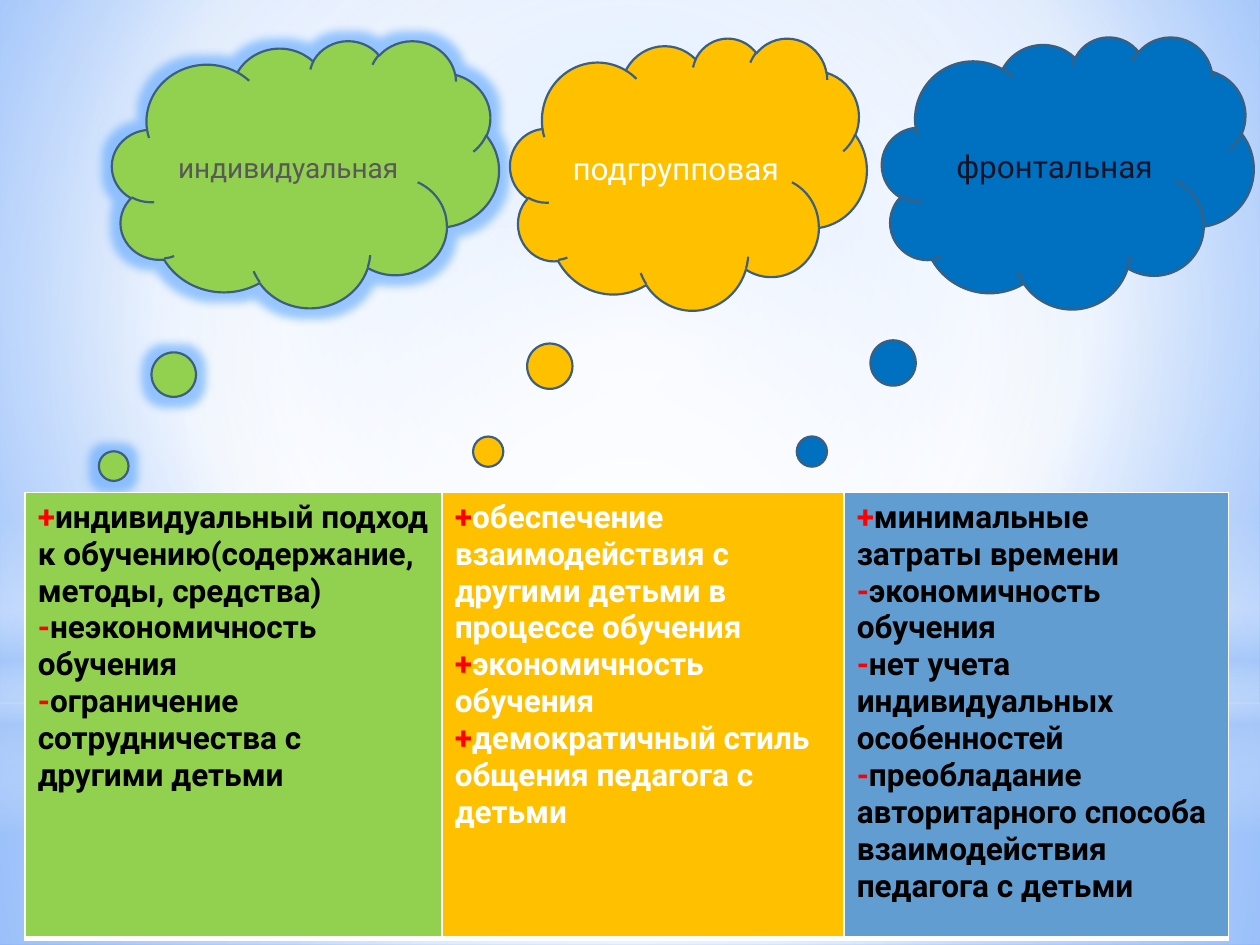
from typing import NamedTuple

from lxml import etree
from pptx import Presentation
from pptx import util as u
from pptx.dml.color import RGBColor
from pptx.enum import shapes, text
from pptx.oxml import ns

FONT = "Roboto"
WHITE = RGBColor(0xFF, 0xFF, 0xFF)
BLACK = RGBColor(0x00, 0x00, 0x00)
RED = RGBColor(0xFF, 0x00, 0x00)
GREEN = RGBColor(0x92, 0xD0, 0x50)
AMBER = RGBColor(0xFF, 0xC0, 0x00)
BLUE = RGBColor(0x00, 0x70, 0xC0)
SOFT_BLUE = RGBColor(0x62, 0x9D, 0xD1)
PALE_BLUE = RGBColor(0xAC, 0xCB, 0xF9)
SKY = RGBColor(0x95, 0xC0, 0xFF)
DEEP_SKY = RGBColor(0x55, 0x99, 0xFF)
GLOW = RGBColor(0x5A, 0xA5, 0xFF)
OUTLINE = RGBColor(0x3C, 0x5F, 0x7F)
GREY = RGBColor(0x59, 0x59, 0x59)
NAVY = RGBColor(0x12, 0x14, 0x29)


class Stop(NamedTuple):
    pos: int
    color: RGBColor
    opacity: int = 100


class Layer(NamedTuple):
    kind: shapes.MSO_SHAPE
    top: float
    height: float
    stops: list[Stop]
    radial: bool = True


class Cloud(NamedTuple):
    label: str
    box: tuple[float, float, float, float]
    tail: tuple[float, float]
    fill: RGBColor
    color: RGBColor
    size: int = 18
    glow: bool = False


class Column(NamedTuple):
    width: float
    fill: RGBColor
    color: RGBColor
    points: list[str]  # the first character is the plus or minus sign


CENTER = (50, 50, 50, 50)
RECT, OVAL = shapes.MSO_SHAPE.RECTANGLE, shapes.MSO_SHAPE.OVAL

BACKDROP = [Stop(0, SKY), Stop(60, WHITE), Stop(100, DEEP_SKY)]
LAYERS = [
    Layer(RECT, 5.58, 1.92, [Stop(0, WHITE, 91), Stop(37, WHITE, 76), Stop(100, PALE_BLUE, 79)]),
    Layer(RECT, 0, 5.58, [Stop(0, WHITE, 89), Stop(48, WHITE, 62), Stop(100, PALE_BLUE, 79)]),
    Layer(RECT, 4.12, 2.5, [Stop(0, WHITE, 0), Stop(29, WHITE, 30), Stop(45, PALE_BLUE, 40),
                            Stop(55, WHITE, 26), Stop(65, PALE_BLUE, 60),
                            Stop(100, WHITE, 0)], radial=False),
    Layer(OVAL, 1.75, 5.58, [Stop(0, WHITE), Stop(56, WHITE, 0)]),
]
CLOUDS = [
    Cloud("индивидуальная ", (0.89, 0.32, 3.07, 2.12), (-0.63, 1.39), GREEN, GREY, 16, True),
    Cloud("подгрупповая", (4.05, 0.3, 2.83, 2.16), (-0.71, 1.29), AMBER, WHITE),
    Cloud("фронтальная", (7, 0.29, 2.95, 2.16), (-0.88, 1.31), BLUE, NAVY),
]
COLUMNS = [
    Column(3.31, GREEN, BLACK, [
        "+индивидуальный подход к обучению(содержание, методы, средства)",
        "-неэкономичность обучения",
        "-ограничение сотрудничества с другими детьми"]),
    Column(3.19, AMBER, WHITE, [
        "+обеспечение взаимодействия с другими детьми в процессе обучения",
        "+экономичность обучения",
        "+демократичный стиль общения педагога с детьми"]),
    Column(3.05, SOFT_BLUE, BLACK, [
        "+минимальные затраты времени",
        "-экономичность обучения",
        "-нет учета индивидуальных особенностей",
        "-преобладание авторитарного способа взаимодействия педагога с детьми"]),
]


def add_xml(parent, tag: str, **attrs):
    return etree.SubElement(parent, ns.qn(tag), {k: str(v) for k, v in attrs.items()})


def add_color(parent, color: RGBColor, opacity: int = 100) -> None:
    clr = add_xml(parent, "a:srgbClr", val=color)
    if opacity < 100:
        add_xml(clr, "a:alpha", val=opacity * 1000)


def set_gradient(fill, owner, stops: list[Stop], focus=None) -> None:
    """Radial towards the focus insets (percent), or top to bottom without them."""
    fill.gradient()
    grad = owner.find(".//" + ns.qn("a:gradFill"))
    for child in list(grad):
        grad.remove(child)
    gs_list = add_xml(grad, "a:gsLst")
    for stop in stops:
        gs = add_xml(gs_list, "a:gs", pos=stop.pos * 1000)
        add_color(gs, stop.color, stop.opacity)
    if focus:
        path = add_xml(grad, "a:path", path="circle")
        add_xml(path, "a:fillToRect", **{k: v * 1000 for k, v in zip("ltrb", focus)})
    else:
        add_xml(grad, "a:lin", ang=90 * 60000, scaled=0)


def add_run(p, words: str, size: int, color: RGBColor, bold: bool = False) -> None:
    r = p.add_run()
    r.text = words
    r.font.name, r.font.size, r.font.bold = FONT, u.Pt(size), bold
    r.font.color.rgb = color


def add_layer(s, layer: Layer) -> None:
    sp = s.shapes.add_shape(layer.kind, 0, u.Inches(layer.top), u.Inches(10), u.Inches(layer.height))
    sp.shadow.inherit = False
    sp.line.fill.background()
    set_gradient(sp.fill, sp._element.spPr, layer.stops, CENTER if layer.radial else None)


def add_cloud(s, cloud: Cloud) -> None:
    sp = s.shapes.add_shape(shapes.MSO_SHAPE.CLOUD_CALLOUT, *map(u.Inches, cloud.box))
    sp.adjustments[0], sp.adjustments[1] = cloud.tail
    sp.fill.solid()
    sp.fill.fore_color.rgb = cloud.fill
    sp.line.color.rgb = OUTLINE
    sp.line.width = u.Pt(1.25)
    sp.shadow.inherit = False
    if cloud.glow:
        effects = sp._element.spPr.find(ns.qn("a:effectLst"))
        add_color(add_xml(effects, "a:glow", rad=u.Pt(10)), GLOW, 60)
    tf = sp.text_frame
    tf.word_wrap = True
    tf.vertical_anchor = text.MSO_ANCHOR.MIDDLE
    p = tf.paragraphs[0]
    p.alignment = text.PP_ALIGN.CENTER
    add_run(p, cloud.label, cloud.size, cloud.color)


def fill_cell(cell, column: Column) -> None:
    tc_pr = cell._tc.get_or_add_tcPr()
    for side, width in zip("LRTB", (1, 1, 1, 3)):
        ln = add_xml(tc_pr, f"a:ln{side}", w=u.Pt(width))
        add_color(add_xml(ln, "a:solidFill"), WHITE)
    cell.fill.solid()
    cell.fill.fore_color.rgb = column.fill
    tf = cell.text_frame
    for i, point in enumerate(column.points):
        p = tf.add_paragraph() if i else tf.paragraphs[0]
        add_run(p, point[0], 18, RED, bold=True)
        add_run(p, point[1:], 18, column.color, bold=True)


def add_comparison(s, columns: list[Column]) -> None:
    width = sum(c.width for c in columns)
    table = s.shapes.add_table(1, len(columns), u.Inches(0.2), u.Inches(3.91),
                               u.Inches(width), u.Inches(3.54)).table
    table.first_row = table.horz_banding = False
    for i, column in enumerate(columns):
        table.columns[i].width = u.Inches(column.width)
        fill_cell(table.cell(0, i), column)


def main() -> None:
    prs = Presentation()
    prs.slide_width, prs.slide_height = u.Inches(10), u.Inches(7.5)
    s = prs.slides.add_slide(prs.slide_layouts[6])

    # Background
    set_gradient(s.background.fill, s._element, BACKDROP, (20, 10, 20, 60))
    for layer in LAYERS:
        add_layer(s, layer)

    # Forms of teaching
    for cloud in CLOUDS:
        add_cloud(s, cloud)

    # Pros and cons
    add_comparison(s, COLUMNS)

    prs.save("out.pptx")


if __name__ == "__main__":
    main()
